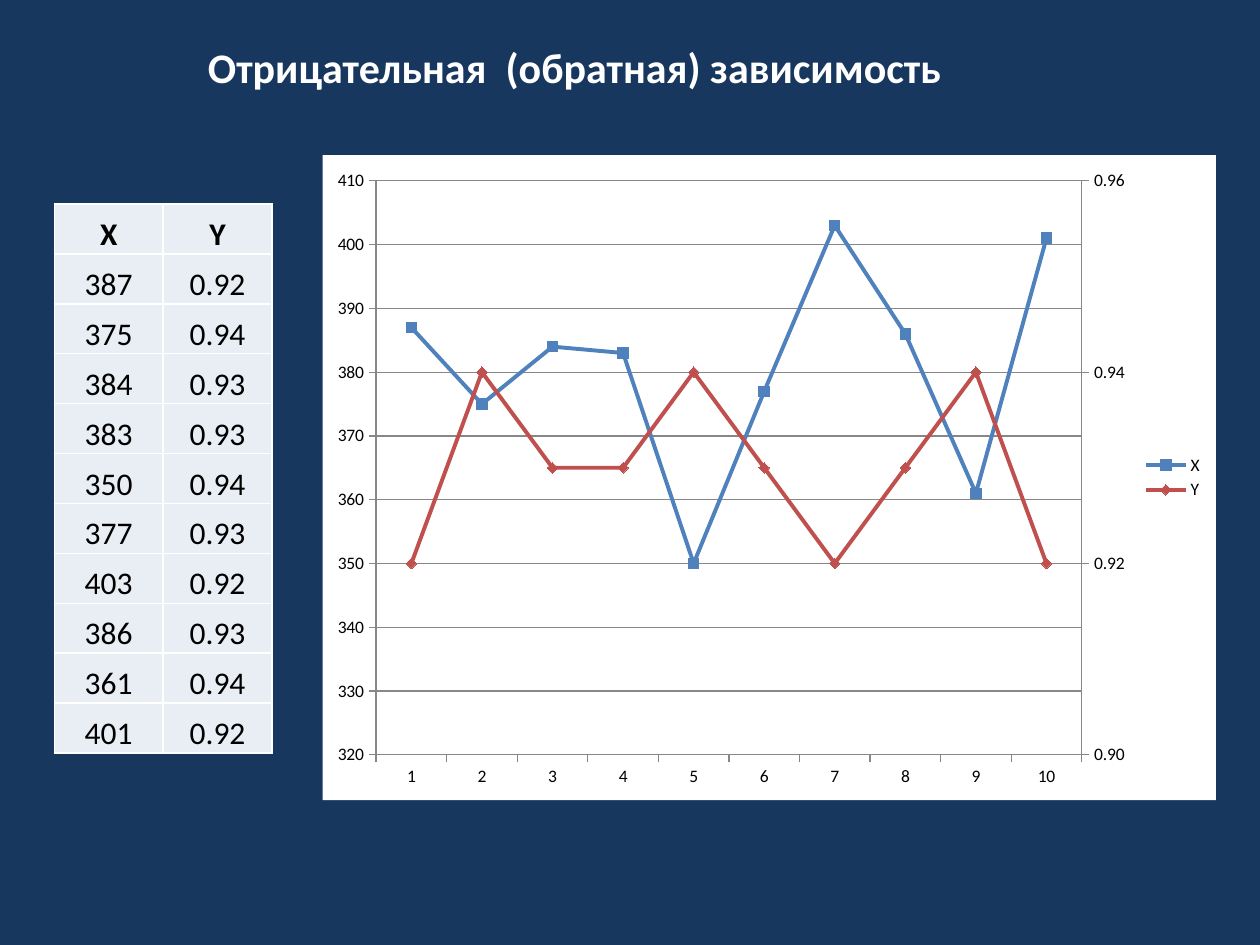
from copy import deepcopy

from lxml import etree
from pptx import Presentation
from pptx import util as u
from pptx.chart.data import CategoryChartData
from pptx.dml.color import RGBColor
from pptx.enum import chart as ch, text
from pptx.oxml import parse_xml
from pptx.oxml.ns import nsdecls, qn

NAVY, WHITE, BLACK, GREY = "17375E", "FFFFFF", "000000", "878787"
CELL, BLUE, RED = "E9EDF4", "4F81BD", "C0504D"
FONT = "Calibri"
X = [387, 375, 384, 383, 350, 377, 403, 386, 361, 401]
Y = [0.92, 0.94, 0.93, 0.93, 0.94, 0.93, 0.92, 0.93, 0.94, 0.92]


def paint(color_format, color):
    color_format.rgb = RGBColor.from_string(color)


def fill(target, color):
    target.fill.solid()
    paint(target.fill.fore_color, color)


def write(frame, words, size=18, color=BLACK, bold=False,
          align=text.PP_ALIGN.CENTER):
    paragraph = frame.paragraphs[0]
    paragraph.alignment = align
    run = paragraph.add_run()
    run.text = words
    run.font.name, run.font.size, run.font.bold = FONT, u.Pt(size), bold
    paint(run.font.color, color)


def add_heading(slide):
    heading = slide.shapes.title
    heading.left, heading.top = u.Pt(111.6), u.Pt(20)
    heading.width, heading.height = u.Pt(607), u.Pt(36)
    frame = heading.text_frame
    frame.vertical_anchor = text.MSO_ANCHOR.TOP
    frame.auto_size = text.MSO_AUTO_SIZE.NONE
    write(frame, "Отрицательная  (обратная) зависимость", size=24,
          color=WHITE, bold=True, align=text.PP_ALIGN.LEFT)


def outline_cell(cell):
    properties = cell._tc.get_or_add_tcPr()
    for side in "LRTB":
        properties.append(parse_xml(
            f'<a:ln{side} {nsdecls("a")} w="12700"><a:solidFill>'
            f'<a:srgbClr val="{WHITE}"/></a:solidFill></a:ln{side}>'))


def add_data_table(slide):
    rows = [("X", "Y")] + [(f"{x}", f"{y:.2f}") for x, y in zip(X, Y)]
    table = slide.shapes.add_table(len(rows), 2, u.Pt(31), u.Pt(116.6),
                                   u.Pt(124.4), u.Pt(314)).table
    for column in table.columns:
        column.width = u.Pt(62.2)
    for r, values in enumerate(rows):
        table.rows[r].height = u.Pt(28.54)
        for c, value in enumerate(values):
            cell = table.cell(r, c)
            cell.margin_left = cell.margin_right = cell.margin_top = u.Pt(0.75)
            cell.margin_bottom = 0
            cell.vertical_anchor = text.MSO_ANCHOR.BOTTOM
            outline_cell(cell)
            fill(cell, CELL)
            write(cell.text_frame, value, bold=r == 0)


def style_series(series, color, marker):
    series.smooth = False
    series.format.line.width = u.Pt(2.25)
    paint(series.format.line.color, color)
    series.marker.style, series.marker.size = marker, 6
    fill(series.marker.format, color)
    paint(series.marker.format.line.color, color)


def style_axis(axis):
    axis.major_tick_mark = ch.XL_TICK_MARK.OUTSIDE
    axis.minor_tick_mark = ch.XL_TICK_MARK.NONE
    paint(axis.format.line.color, GREY)


def add_right_axis(plot_area):
    """Move the second series to its own plot with a value axis at the right."""
    left_plot = plot_area.find(qn("c:lineChart"))
    right_plot = deepcopy(left_plot)
    left_plot.remove(left_plot.findall(qn("c:ser"))[1])
    right_plot.remove(right_plot.find(qn("c:ser")))
    left_plot.addnext(right_plot)

    categories = deepcopy(plot_area.find(qn("c:catAx")))
    values = deepcopy(plot_area.find(qn("c:valAx")))
    plot_area.find(qn("c:valAx")).addnext(values)
    values.addnext(categories)

    # Separate ids pair the new axes with the new plot
    new_ids = {}
    for part in (right_plot, values, categories):
        for node in part.iter(qn("c:axId"), qn("c:crossAx")):
            old = node.get("val")
            node.set("val", new_ids.setdefault(old, str(5001 + len(new_ids))))

    categories.find(qn("c:delete")).set("val", "1")
    values.remove(values.find(qn("c:majorGridlines")))
    settings = {"c:axPos": "r", "c:crosses": "max", "c:majorUnit": "0.02",
                "c:scaling/c:max": "0.96", "c:scaling/c:min": "0.9"}
    for route, value in settings.items():
        node = values
        for tag in route.split("/"):
            node = node.find(qn(tag))
        node.set("val", value)
    values.find(qn("c:numFmt")).set("formatCode", "0.00")


def place_plot(plot_area, **shares):
    for old in plot_area.findall(qn("c:layout")):
        plot_area.remove(old)
    layout = parse_xml(f'<c:layout {nsdecls("c")}><c:manualLayout/></c:layout>')
    rules = {"layoutTarget": "inner", "xMode": "edge", "yMode": "edge", **shares}
    for tag, value in rules.items():
        etree.SubElement(layout[0], qn(f"c:{tag}")).set("val", str(value))
    plot_area.insert(0, layout)


def add_line_chart(slide):
    data = CategoryChartData()
    data.categories = [str(n) for n in range(1, len(X) + 1)]
    data.add_series("X", X, number_format="0")
    data.add_series("Y", Y, number_format="0.00")
    chart = slide.shapes.add_chart(
        ch.XL_CHART_TYPE.LINE_MARKERS, u.Pt(184.3), u.Pt(88.6),
        u.Pt(510.5), u.Pt(368.6), data).chart
    chart.has_title = False
    chart.font.name, chart.font.size = FONT, u.Pt(10)
    paint(chart.font.color, BLACK)
    chart.has_legend = True
    chart.legend.position = ch.XL_LEGEND_POSITION.RIGHT
    chart.legend.include_in_layout = False

    plot = chart.plots[0]
    plot.vary_by_categories = False
    markers = ch.XL_MARKER_STYLE
    style_series(plot.series[0], BLUE, markers.SQUARE)
    style_series(plot.series[1], RED, markers.DIAMOND)

    # Left axis, whose settings the right axis starts from
    style_axis(chart.category_axis)
    values = chart.value_axis
    style_axis(values)
    values.minimum_scale, values.maximum_scale, values.major_unit = 320, 410, 10
    values.has_major_gridlines = True
    paint(values.major_gridlines.format.line.color, GREY)
    values.tick_labels.number_format = "0"
    values.tick_labels.number_format_is_linked = False

    chart_node = chart._chartSpace.find(qn("c:chart"))
    plot_area = chart_node.find(qn("c:plotArea"))
    add_right_axis(plot_area)
    place_plot(plot_area, x=0.06, y=0.04, w=0.79, h=0.89)
    chart_node.addnext(parse_xml(
        f'<c:spPr {nsdecls("c", "a")}><a:solidFill><a:srgbClr val="{WHITE}"/>'
        '</a:solidFill><a:ln><a:noFill/></a:ln></c:spPr>'))


def main():
    deck = Presentation()
    deck.slide_width, deck.slide_height = u.Pt(720), u.Pt(540)
    slide = deck.slides.add_slide(deck.slide_layouts[5])
    fill(slide.background, NAVY)
    add_data_table(slide)
    add_heading(slide)
    add_line_chart(slide)
    deck.save("out.pptx")


if __name__ == "__main__":
    main()
